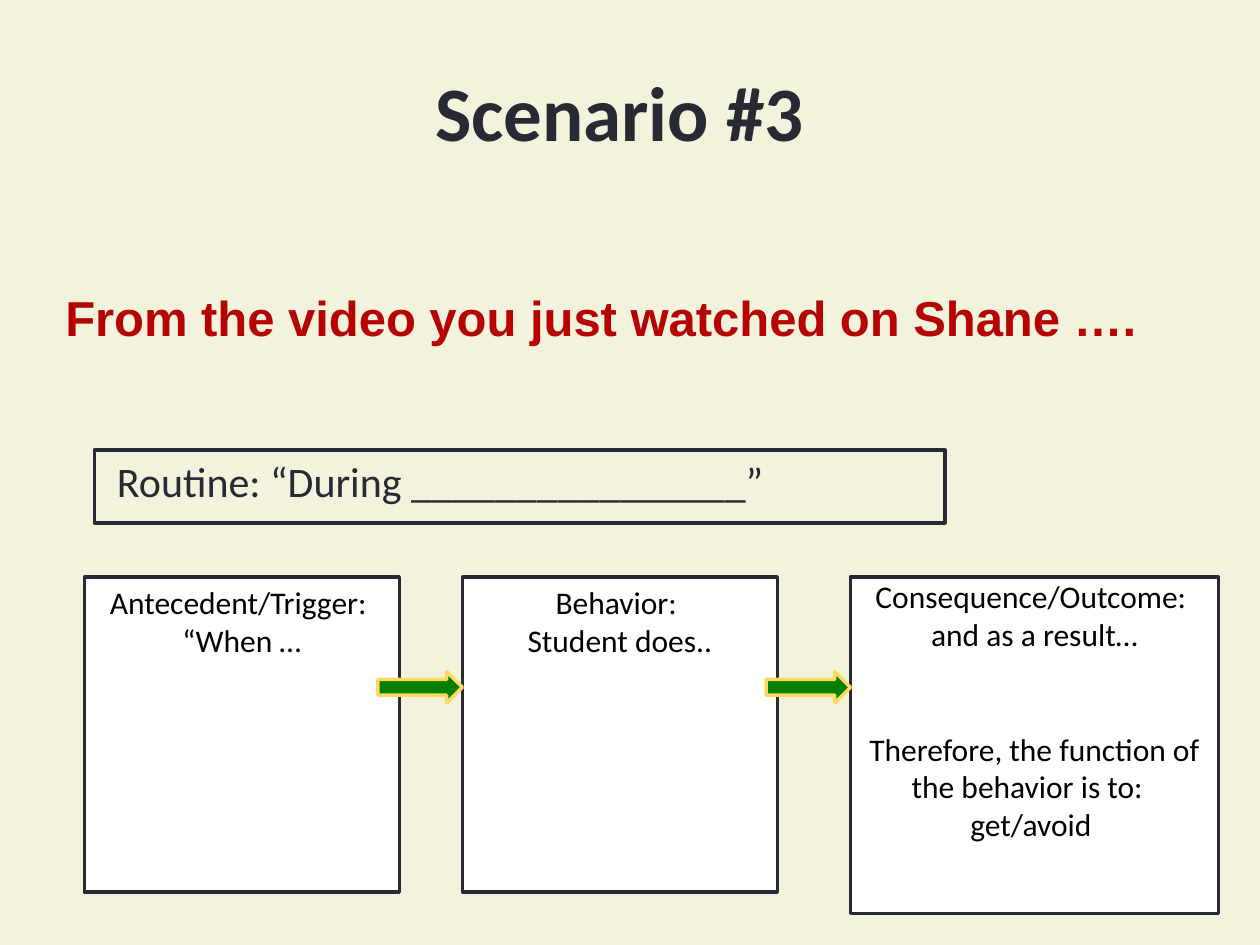
from dataclasses import dataclass

from pptx import Presentation
from pptx.dml.color import RGBColor
from pptx.enum import shapes, text
from pptx.util import Inches, Pt

INK = "292934"
BLACK = "000000"


@dataclass
class Step:
    left: float
    width: float
    height: float
    lines: tuple[str, ...]
    top_inset: float = 0.05
    gap_before: tuple[int, ...] = ()


STEPS = [
    Step(0.67, 2.5, 2.5, ("Antecedent/Trigger: ", "“When …")),
    Step(3.67, 2.5, 2.5, ("Behavior: ", "Student does..")),
    Step(6.75, 2.92, 2.67,
         ("Consequence/Outcome: ", "and as a result…",
          "Therefore, the function of the behavior is to:  ", "get/avoid "),
         top_inset=0, gap_before=(0, 0, 44, 0)),
]
STEP_TOP = 4.58
ARROW_WIDTH = 0.67


def rgb(value: str) -> RGBColor:
    return RGBColor.from_string(value)


def write(shape, lines, *, size: float, color: str, font: str = "Calibri",
          bold: bool = False, align=text.PP_ALIGN.LEFT,
          anchor=text.MSO_ANCHOR.TOP, gap_before=()) -> None:
    frame = shape.text_frame
    frame.word_wrap = True
    frame.vertical_anchor = anchor
    frame.text = "\n".join(lines)
    for para in frame.paragraphs:
        para.alignment = align
        para.font.size = Pt(size)
        para.font.name = font
        para.font.bold = bold
        para.font.color.rgb = rgb(color)
    for para, gap in zip(frame.paragraphs, gap_before):
        if gap:
            para.space_before = Pt(gap)


def add_box(slide, kind, left: float, top: float, width: float, height: float,
            *, fill: str | None, line: str):
    box = slide.shapes.add_shape(
        kind, Inches(left), Inches(top), Inches(width), Inches(height))
    box.shadow.inherit = False
    if fill:
        box.fill.solid()
        box.fill.fore_color.rgb = rgb(fill)
    else:
        box.fill.background()
    box.line.color.rgb = rgb(line)
    box.line.width = Pt(2)
    return box


def add_label(slide, left: float, top: float, width: float, height: float,
              label: str, **style) -> None:
    box = slide.shapes.add_textbox(
        Inches(left), Inches(top), Inches(width), Inches(height))
    write(box, [label], **style)


def add_step(slide, step: Step) -> None:
    box = add_box(slide, shapes.MSO_SHAPE.RECTANGLE, step.left, STEP_TOP,
                  step.width, step.height, fill="FFFFFF", line=INK)
    box.text_frame.margin_top = Inches(step.top_inset)
    write(box, step.lines, size=18, color=BLACK,
          align=text.PP_ALIGN.CENTER, gap_before=step.gap_before)


def add_arrow_into(slide, step: Step) -> None:
    add_box(slide, shapes.MSO_SHAPE.RIGHT_ARROW, step.left - ARROW_WIDTH, 5.33,
            ARROW_WIDTH, 0.25, fill="008000", line="FFD95E")


def main() -> None:
    deck = Presentation()
    deck.slide_width, deck.slide_height = Inches(10), Inches(7.5)
    slide = deck.slides.add_slide(deck.slide_layouts[5])
    slide.background.fill.solid()
    slide.background.fill.fore_color.rgb = rgb("F3F2DC")

    title = slide.shapes.title
    title.left, title.top = Inches(0.42), Inches(0.25)
    title.width, title.height = Inches(9), Inches(1.25)
    write(title, ["Scenario #3"], size=44, color=INK, bold=True,
          align=text.PP_ALIGN.CENTER, anchor=text.MSO_ANCHOR.MIDDLE)

    add_label(slide, 0.42, 2.23, 9.33, 0.55,
              "From the video you just watched on Shane ….",
              size=28, color="B60202", font="Arial", bold=True)
    add_label(slide, 0.83, 3.57, 8.25, 0.5,
              "Routine: “During ________________”", size=24, color=INK)
    add_box(slide, shapes.MSO_SHAPE.RECTANGLE, 0.75, 3.57, 6.75, 0.58,
            fill=None, line=INK)

    for step in STEPS:
        add_step(slide, step)
    for step in STEPS[1:]:
        add_arrow_into(slide, step)

    deck.save("out.pptx")


if __name__ == "__main__":
    main()
